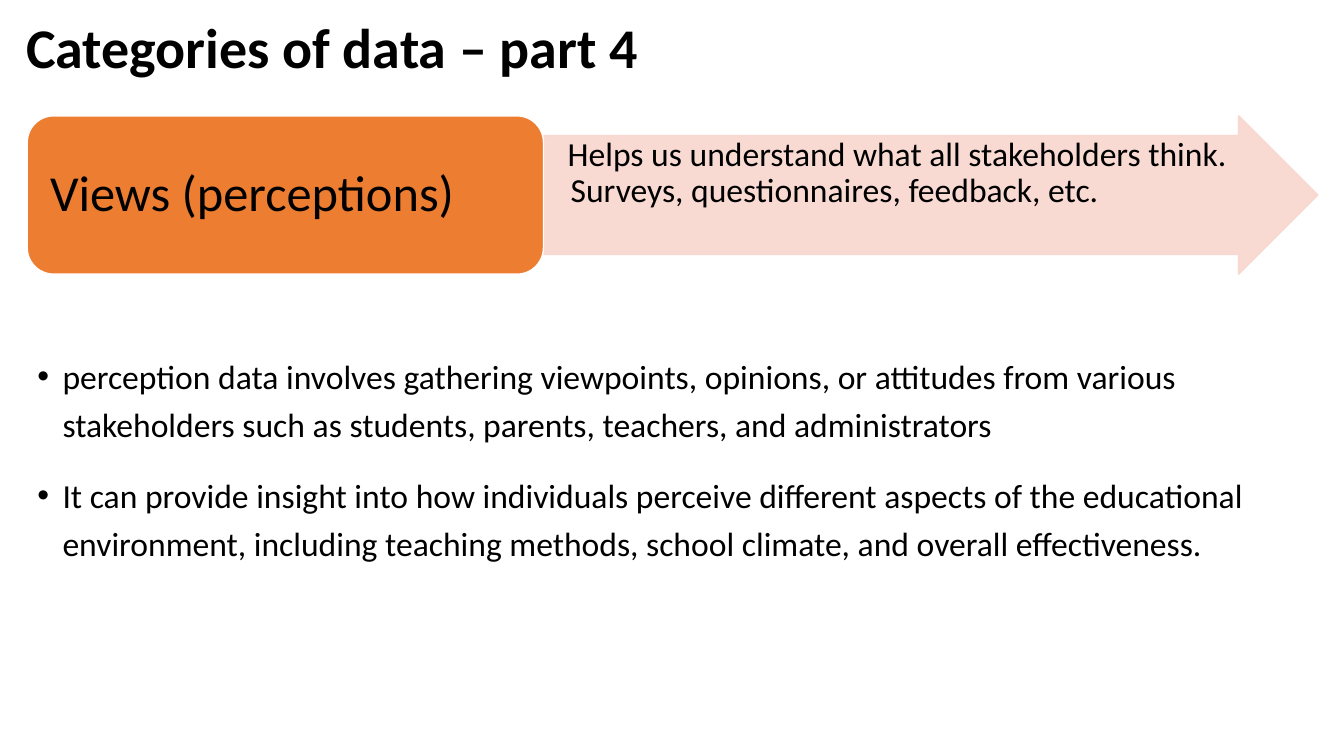
from lxml import etree
from pptx import Presentation
from pptx.dml.color import RGBColor
from pptx.enum.shapes import MSO_SHAPE
from pptx.enum.text import MSO_ANCHOR, MSO_AUTO_SIZE, PP_ALIGN
from pptx.oxml.ns import qn
from pptx.util import Pt

PX = 9144  # EMU per px, 100 px to the inch
LEFT = PP_ALIGN.LEFT
TOP, MIDDLE = MSO_ANCHOR.TOP, MSO_ANCHOR.MIDDLE
NO_FIT = MSO_AUTO_SIZE.NONE
ARROW, ROUNDED = MSO_SHAPE.RIGHT_ARROW, MSO_SHAPE.ROUNDED_RECTANGLE

FONT = "Calibri"
COLORS = {"text": "000000", "category": "ED7D31", "outline": "FFFFFF", "arrow": "F8D7CE"}
LABEL_W = 512

TITLE = "Categories of data – part 4"
CATEGORY = "Views (perceptions)"
SUMMARY = ("Helps us understand what all stakeholders think. "
           "Surveys, questionnaires, feedback, etc.")
POINTS = [
    "perception data involves gathering viewpoints, opinions, or attitudes from various "
    "stakeholders such as students, parents, teachers, and administrators",
    "It can provide insight into how individuals perceive different aspects of the "
    "educational environment, including teaching methods, school climate, and overall "
    "effectiveness.",
]


def rgb(name):
    return RGBColor.from_string(COLORS[name])


def place(sp, x, y, w, h):
    sp.left, sp.top, sp.width, sp.height = (v * PX for v in (x, y, w, h))


def style(p, size, spacing, bold=False):
    p.alignment = LEFT
    p.line_spacing = spacing
    p.font.name, p.font.size, p.font.bold = FONT, Pt(size), bold
    p.font.color.rgb = rgb("text")


def indent(p, margin, first):
    pPr = p._p.get_or_add_pPr()
    pPr.set("marL", str(margin * PX))
    pPr.set("indent", str(first * PX))


def setup_text(sp, anchor, inset_x, inset_y):
    tf = sp.text_frame
    tf.word_wrap, tf.auto_size, tf.vertical_anchor = True, NO_FIT, anchor
    tf.margin_left = tf.margin_right = inset_x * PX
    tf.margin_top = tf.margin_bottom = inset_y * PX
    return tf


def add_block(s, kind, box, fill, line, alpha=100):
    """Add a filled preset shape; alpha is its opacity in percent."""
    sp = s.shapes.add_shape(kind, *(v * PX for v in box))
    sp.shadow.inherit = False
    sp.fill.solid()
    sp.fill.fore_color.rgb = rgb(fill)
    sp.line.color.rgb = rgb(line)
    sp.line.width = Pt(1)
    if alpha < 100:
        for color in sp._element.spPr.iter(qn("a:srgbClr")):
            etree.SubElement(color, qn("a:alpha"), val=str(alpha * 1000))
    return sp


def add_title(s, x, y, w, h):
    sp = s.shapes.title
    place(sp, x, y, w, h)
    tf = setup_text(sp, MIDDLE, 10, 5)
    tf.text = TITLE
    style(tf.paragraphs[0], 40, 0.9, bold=True)


def add_category(s, x, y, w, h):
    """Category label on the left, summary arrow filling the rest of the box."""
    arrow = add_block(s, ARROW, (x + LABEL_W, y, w - LABEL_W, h), "arrow", "arrow", 90)
    arrow.adjustments[0], arrow.adjustments[1] = 0.75, 0.5
    label = add_block(s, ROUNDED, (x, y, LABEL_W, h), "category", "outline")

    tf = setup_text(arrow, TOP, 2, 2)
    tf.text = SUMMARY
    style(tf.paragraphs[0], 24, 0.9)
    indent(tf.paragraphs[0], 25, -3)

    tf = setup_text(label, MIDDLE, 15, 7)
    tf.text = CATEGORY
    style(tf.paragraphs[0], 36, 0.9)


def add_points(s, x, y, w, h):
    sp = s.placeholders[1]
    place(sp, x, y, w, h)
    tf = setup_text(sp, TOP, 10, 5)
    tf.text = "\n".join(POINTS)
    for p in tf.paragraphs:
        style(p, 24, 1.2)
        p.space_before, p.space_after = Pt(10), Pt(6)
        indent(p, 25, -25)


def main():
    prs = Presentation()
    prs.slide_width, prs.slide_height = 1333 * PX, 750 * PX
    s = prs.slides.add_slide(prs.slide_layouts[1])
    add_title(s, 16, 11, 716, 78)
    add_category(s, 27, 115, 1280, 157)
    add_points(s, 27, 340, 1262, 258)
    prs.save("out.pptx")


if __name__ == "__main__":
    main()
